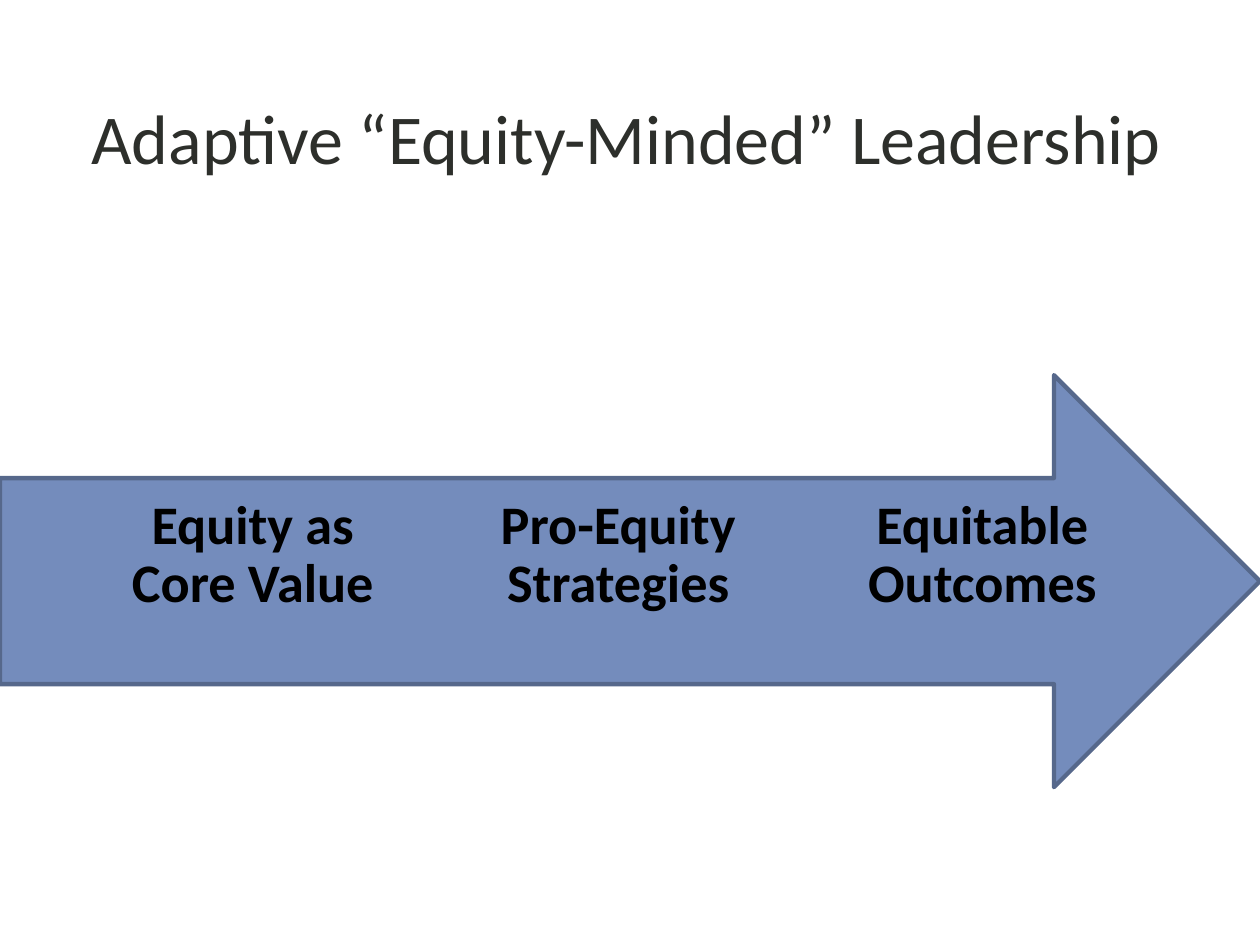
from dataclasses import dataclass

from pptx import Presentation
from pptx import util as u
from pptx.dml.color import RGBColor as Rgb
from pptx.enum import shapes, text

WIDE, HIGH = u.Inches(10), u.Inches(7.5)


@dataclass(frozen=True)
class Theme:
    """Colours, font and type sizes of the slide."""
    font: str = "Calibri"
    title: str = "2D2F2B"
    label: str = "000000"
    arrow: str = "748CBC"
    edge: str = "56688B"
    head: int = 40
    stage: int = 31


LOOK = Theme()
STAGES = (
    ("Equity as Core Value", 0.095, 0.211),
    ("Pro-Equity Strategies", 0.37, 0.241),
    ("Equitable Outcomes", 0.659, 0.241),
)


def span(left, top, width, height):
    """Turn shares of the slide's size into lengths."""
    return [round(share * side) for share, side
            in zip((left, top, width, height), (WIDE, HIGH) * 2)]


def apply(item, values):
    """Set each named attribute of an item."""
    for name, value in values.items():
        setattr(item, name, value)


def write(shape, words, size, color, bold=False, inset=None, lines=None):
    """Put centred, formatted words in a shape."""
    frame = shape.text_frame
    frame.text = words
    apply(frame, {"word_wrap": True, "auto_size": text.MSO_AUTO_SIZE.NONE,
                  "vertical_anchor": text.MSO_ANCHOR.MIDDLE})
    if inset:
        apply(frame, dict(zip(("margin_left", "margin_top", "margin_right",
                               "margin_bottom"), map(u.Inches, inset))))
    para = frame.paragraphs[0]
    apply(para, {"alignment": text.PP_ALIGN.CENTER, "line_spacing": lines})
    font = para.runs[0].font
    apply(font, {"name": LOOK.font, "size": u.Pt(size), "bold": bold})
    font.color.rgb = Rgb.from_string(color)


def add_title(slide, words):
    """Place the title in its placeholder."""
    title = slide.shapes.title
    apply(title, dict(zip(("left", "top", "width", "height"),
                          span(0.028, 0.045, 0.938, 0.2))))
    write(title, words, LOOK.head, LOOK.title)


def add_arrow(group):
    """Draw the arrow across the slide."""
    arrow = group.shapes.add_shape(shapes.MSO_SHAPE.RIGHT_ARROW,
                                   *span(0, 0.397, 1, 0.436))
    arrow.shadow.inherit = False
    arrow.fill.solid()
    arrow.fill.fore_color.rgb = Rgb.from_string(LOOK.arrow)
    arrow.line.color.rgb = Rgb.from_string(LOOK.edge)
    arrow.line.width = u.Pt(2.5)


def add_stage(group, words, left, width):
    """Add one stage label on the arrow."""
    box = group.shapes.add_textbox(*span(left, 0.48, width, 0.217))
    write(box, words, LOOK.stage, LOOK.label, True, (0, 0.34, 0, 0.34), 0.9)


def main():
    """Build and save the slide."""
    deck = Presentation()
    apply(deck, {"slide_width": WIDE, "slide_height": HIGH})
    slide = deck.slides.add_slide(deck.slide_layouts.get_by_name("Title Only"))
    add_title(slide, "Adaptive “Equity-Minded” Leadership")
    group = slide.shapes.add_group_shape()
    add_arrow(group)
    for stage in STAGES:
        add_stage(group, *stage)
    deck.save("out.pptx")


if __name__ == "__main__":
    main()
